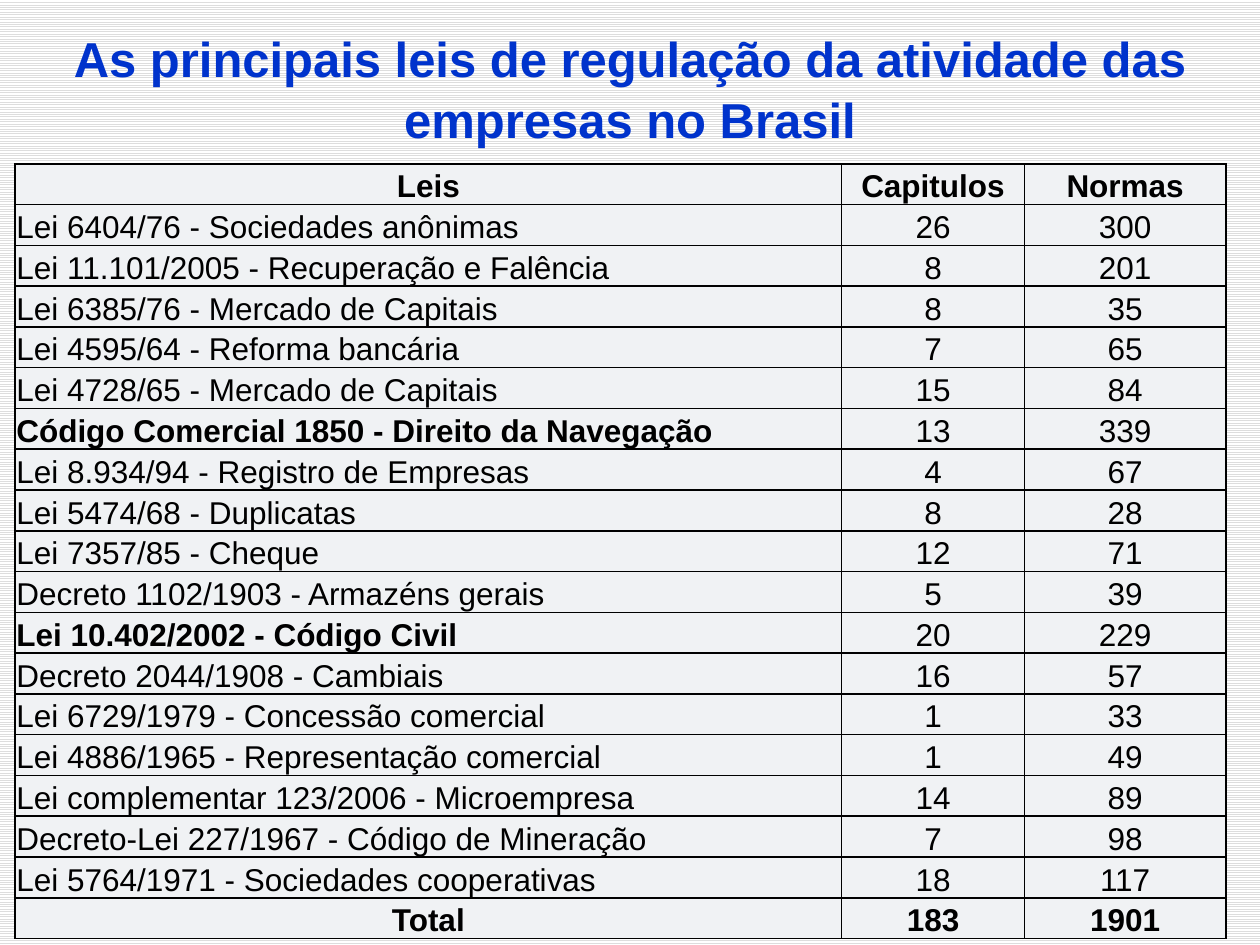
import pptx
import pptx.util
import pptx.dml.color
import pptx.enum.dml
import pptx.enum.text
import pptx.oxml
import pptx.oxml.ns

Inches = pptx.util.Inches
Pt = pptx.util.Pt
CENTER = pptx.enum.text.PP_ALIGN.CENTER
LEFT = pptx.enum.text.PP_ALIGN.LEFT


def color(hex_string):
    return pptx.dml.color.RGBColor.from_string(hex_string)


def add_borders(cell, hex_string, points):
    properties = cell._tc.get_or_add_tcPr()
    for side in ("lnL", "lnR", "lnT", "lnB"):
        properties.append(pptx.oxml.parse_xml(
            f'<a:{side} {pptx.oxml.ns.nsdecls("a")} w="{Pt(points)}"><a:solidFill>'
            f'<a:srgbClr val="{hex_string}"/></a:solidFill></a:{side}>'))


presentation = pptx.Presentation()
presentation.slide_width = Inches(10)
presentation.slide_height = Inches(7.5)
slide = presentation.slides.add_slide(presentation.slide_layouts[5])

# Striped background
background = slide.background.fill
background.patterned()
background.pattern = pptx.enum.dml.MSO_PATTERN.LIGHT_HORIZONTAL
background.fore_color.rgb = color("DDDDDD")
background.back_color.rgb = color("FFFFFF")

# Title
title = slide.shapes.title
title.left, title.top = Inches(0.12), Inches(0.13)
title.width, title.height = Inches(9.76), Inches(7.37)
text_frame = title.text_frame
text_frame.text = "As principais leis de regulação da atividade das empresas no Brasil"
text_frame.word_wrap = True
text_frame.auto_size = pptx.enum.text.MSO_AUTO_SIZE.NONE
text_frame.vertical_anchor = pptx.enum.text.MSO_ANCHOR.TOP
text_frame.margin_top = Inches(0.07)
paragraph = text_frame.paragraphs[0]
paragraph.alignment = CENTER
paragraph.line_spacing = 1.05
font = paragraph.runs[0].font
font.name, font.size, font.bold = "Arial", Pt(28), True
font.color.rgb = color("0033CC")

# Table of laws
rows = [
    ("Leis", "Capitulos", "Normas"),
    ("Lei 6404/76 - Sociedades anônimas", 26, 300),
    ("Lei 11.101/2005 - Recuperação e Falência", 8, 201),
    ("Lei 6385/76 - Mercado de Capitais", 8, 35),
    ("Lei 4595/64 - Reforma bancária", 7, 65),
    ("Lei 4728/65 - Mercado de Capitais", 15, 84),
    ("Código Comercial 1850 - Direito da Navegação", 13, 339),
    ("Lei 8.934/94 - Registro de Empresas", 4, 67),
    ("Lei 5474/68 - Duplicatas", 8, 28),
    ("Lei 7357/85 - Cheque", 12, 71),
    ("Decreto 1102/1903 - Armazéns gerais", 5, 39),
    ("Lei 10.402/2002 - Código Civil", 20, 229),
    ("Decreto 2044/1908 - Cambiais", 16, 57),
    ("Lei 6729/1979 - Concessão comercial", 1, 33),
    ("Lei 4886/1965 - Representação comercial", 1, 49),
    ("Lei complementar 123/2006 - Microempresa", 14, 89),
    ("Decreto-Lei 227/1967 - Código de Mineração", 7, 98),
    ("Lei 5764/1971 - Sociedades cooperativas", 18, 117),
    ("Total", 183, 1901),
]
outer_rows = (0, len(rows) - 1)
bold_laws = ("Código Comercial 1850 - Direito da Navegação",
             "Lei 10.402/2002 - Código Civil")

table = slide.shapes.add_table(len(rows), 3, Inches(0.12), Inches(1.3),
                               Inches(9.61), Inches(6.15)).table
table.horz_banding = False
for column, width in zip(table.columns, (6.56, 1.45, 1.6)):
    column.width = Inches(width)

for row_index, row in enumerate(rows):
    for column_index, value in enumerate(row):
        cell = table.cell(row_index, column_index)
        add_borders(cell, "000000", 1)
        cell.fill.solid()
        cell.fill.fore_color.rgb = color("F0F2F4")
        cell.margin_left = cell.margin_right = cell.margin_top = Inches(0.01)
        cell.margin_bottom = 0
        cell.vertical_anchor = pptx.enum.text.MSO_ANCHOR.BOTTOM
        paragraph = cell.text_frame.paragraphs[0]
        paragraph.text = str(value)
        is_outer = row_index in outer_rows
        paragraph.alignment = CENTER if is_outer or column_index > 0 else LEFT
        font = paragraph.runs[0].font
        font.name, font.size = "Arial", Pt(18)
        font.bold = is_outer or value in bold_laws
        font.color.rgb = color("000000")

presentation.save("out.pptx")
